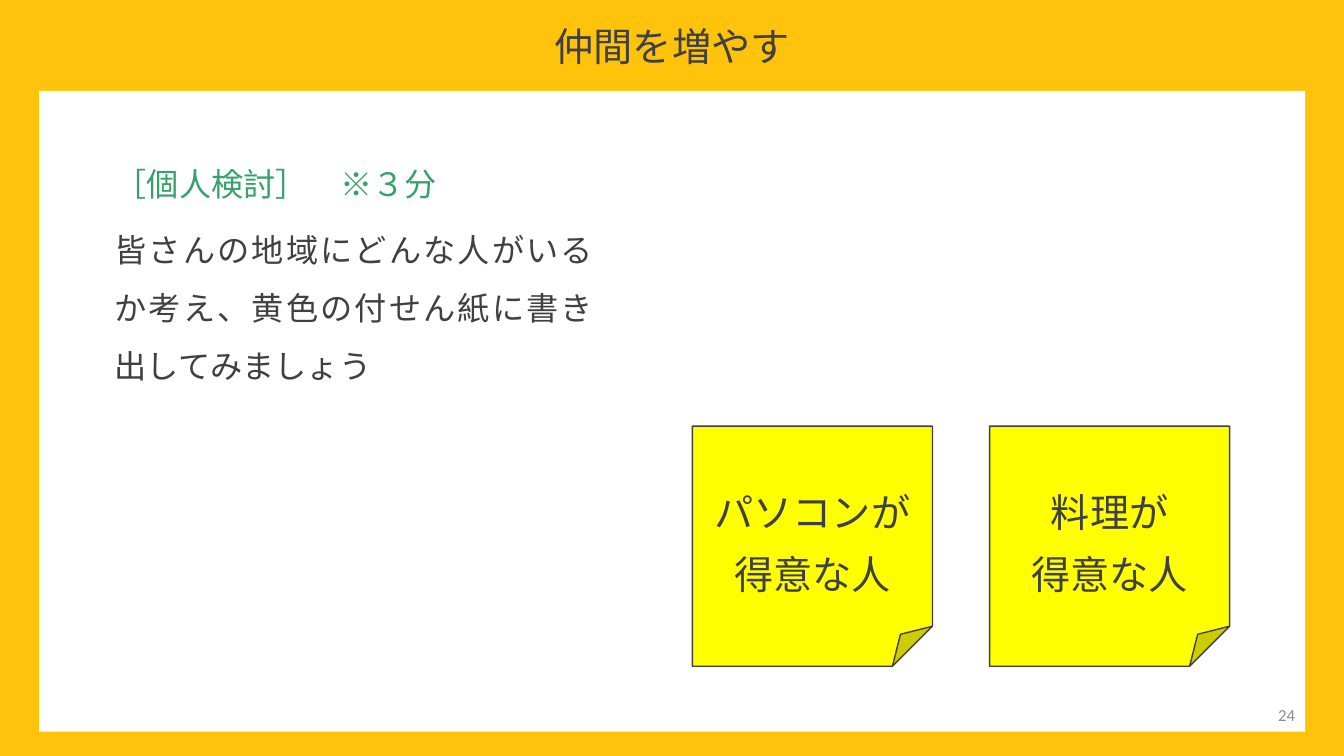
from lxml import etree
from pptx import Presentation
from pptx.dml.color import RGBColor
from pptx.enum import shapes, text
from pptx.oxml import ns
from pptx.util import Cm, Pt

COLORS = {
    "frame": "FFC30C",
    "panel": "FFFFFF",
    "note": "FFFF00",
    "ink": "404040",
    "accent": "35A16B",
    "number": "8C8C8C",
}
JAPANESE = "Noto Sans CJK JP"
LATIN = "Calibri"
WIDTH, HEIGHT = 33.87, 19.05


def rgb(name):
    return RGBColor.from_string(COLORS[name])


class SlideBuilder:
    def __init__(self, slide):
        self.s = slide

    def shape(self, kind, box, fill, line=None):
        sp = self.s.shapes.add_shape(kind, *map(Cm, box))
        sp.shadow.inherit = False
        sp.fill.solid()
        sp.fill.fore_color.rgb = rgb(fill)
        if line:
            sp.line.color.rgb = rgb(line)
            sp.line.width = Pt(1)
        else:
            sp.line.fill.background()
        return sp

    def set_text(self, sp, lines, size, align, spacing=1.0, after=0, font=JAPANESE,
                 anchor=text.MSO_ANCHOR.MIDDLE, insets=(0.25, 0.13, 0.25, 0.13)):
        """Fill a shape with (text, colour) paragraphs; insets run left, top, right, bottom."""
        tf = sp.text_frame
        tf.word_wrap = True
        tf.vertical_anchor = anchor
        (tf.margin_left, tf.margin_top,
         tf.margin_right, tf.margin_bottom) = map(Cm, insets)
        for i, (words, color) in enumerate(lines):
            p = tf.add_paragraph() if i else tf.paragraphs[0]
            p.text = words
            p.alignment = align
            p.line_spacing = spacing
            p.space_after = Pt(after)
            p.font.size = Pt(size)
            p.font.color.rgb = rgb(color)
            p.font.name = font
            # East Asian glyphs take their typeface from a:ea
            latin = p._p.find(".//" + ns.qn("a:latin"))
            latin.addnext(etree.Element(ns.qn("a:ea"), typeface=font))

    def textbox(self, box, lines, size, align, **style):
        sp = self.s.shapes.add_textbox(*map(Cm, box))
        self.set_text(sp, lines, size, align, **style)

    def sticky_note(self, box, lines):
        sp = self.shape(shapes.MSO_SHAPE.FOLDED_CORNER, box, "note", "ink")
        self.set_text(sp, [(words, "ink") for words in lines], 28,
                      text.PP_ALIGN.CENTER, spacing=1.3,
                      insets=(0.25, 0.61, 0.25, 0.13))


def main():
    prs = Presentation()
    prs.slide_width, prs.slide_height = Cm(WIDTH), Cm(HEIGHT)
    b = SlideBuilder(prs.slides.add_slide(prs.slide_layouts[6]))

    rect = shapes.MSO_SHAPE.RECTANGLE
    b.shape(rect, (0, 0, WIDTH, HEIGHT), "frame")
    b.shape(rect, (0.99, 2.29, 31.9, 16.15), "panel")

    note_size, note_step = 6.05, 7.49
    for i, skill in enumerate(["パソコンが", "料理が"]):
        b.sticky_note((17.45 + i * note_step, 10.74, note_size, note_size),
                      [skill, "得意な人"])

    b.textbox((7.06, 0.38, 19.76, 1.7), [("仲間を増やす", "ink")], 28,
              text.PP_ALIGN.CENTER, spacing=0.9)
    b.textbox((2.64, 3.56, 12.57, 6.65),
              [("［個人検討］　※３分", "accent"),
               ("皆さんの地域にどんな人がいるか考え、黄色の付せん紙に書き出してみましょう", "ink")],
              23, text.PP_ALIGN.JUSTIFY, spacing=1.5, after=6,
              anchor=text.MSO_ANCHOR.TOP, insets=(0.25, 0.1, 0.25, 0.2))
    b.textbox((25.27, 17.5, 7.62, 1.02), [("24", "number")], 12,
              text.PP_ALIGN.RIGHT, font=LATIN)

    prs.save("out.pptx")


if __name__ == "__main__":
    main()
